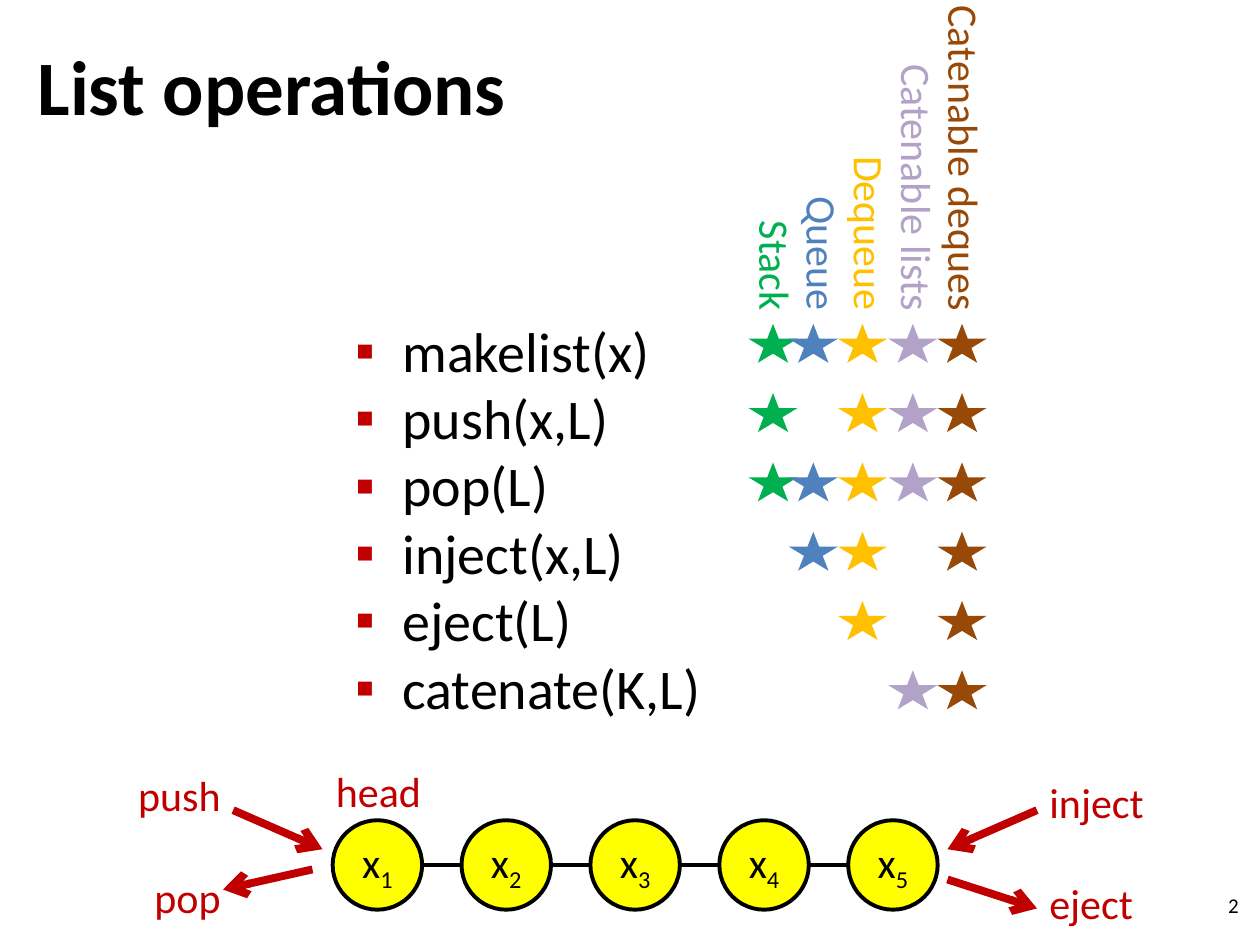
import pptx
import pptx.util
import pptx.dml.color
import pptx.enum.shapes
import pptx.enum.text
import pptx.oxml.ns
import lxml.etree

SHAPE = pptx.enum.shapes.MSO_SHAPE
ALIGN = pptx.enum.text.PP_ALIGN
ANCHOR = pptx.enum.text.MSO_ANCHOR
Pt = pptx.util.Pt
hue = pptx.dml.color.RGBColor.from_string
qn = pptx.oxml.ns.qn

BLACK, RED, YELLOW = "000000", "C00000", "FFFF00"

deck = pptx.Presentation()
deck.slide_width = pptx.util.Inches(10)
deck.slide_height = pptx.util.Inches(7.5)
page = deck.slides.add_slide(deck.slide_layouts[6])
cell = deck.slide_width / 100  # the page is 100 columns by 75 rows


def grid(*cells):
    return [pptx.util.Emu(round(count * cell)) for count in cells]


def add_span(para, text, size, color, bold=False):
    span = para.add_run()
    span.text = text
    looks = {"name": "Calibri", "size": Pt(size), "bold": bold}
    for name, value in looks.items():
        setattr(span.font, name, value)
    span.font.color.rgb = hue(color)
    return span


# Structures: name, colour, star column, rows of the operations they support
structures = [
    ("Stack", "00B050", 59.4, [0, 1, 2]),
    ("Queue", "4F81BD", 62.6, [0, 2, 3]),
    ("Dequeue", "FFC000", 66.5, [0, 1, 2, 3, 4]),
    ("Catenable lists", "B3A2C7", 70.5, [0, 1, 2, 5]),
    ("Catenable deques", "984807", 74.4, [0, 1, 2, 3, 4, 5]),
]
operations = ["makelist(x)", "push(x,L)", "pop(L)", "inject(x,L)", "eject(L)", "catenate(K,L)"]

# Text blocks: place, lines with colours, size, anchor, rotation, paragraph format
right = {"alignment": ALIGN.RIGHT}
top, middle = ANCHOR.TOP, ANCHOR.MIDDLE
names = [(name, color) for name, color, *_ in reversed(structures)]
blocks = [
    ((2, 0.5, 45.7, 12.5), [("List operations", BLACK)], 44, middle, 0, {}),
    ((27.2, 24.6, 32.4, 39.7), [(name, BLACK) for name in operations], 32, top, 0,
     {"line_spacing": Pt(38.5)}),
    ((76, 69.8, 23.3, 4), [("2", BLACK)], 12, middle, 0, right),
    ((55.2, 2, 27.4, 19.9), names, 24, top, 90, {**right, "line_spacing": Pt(27)}),
    ((2.8, 60.6, 15.7, 13.1), [("push", RED), ("pop", RED)], 24, top, 0, right),
    ((82.3, 61.1, 15.7, 13.1), [("inject", RED), ("eject", RED)], 24, top, 0, {}),
    ((18.7, 60.3, 15.7, 5), [("head", RED)], 24, top, 0, right),
]
for place, lines, size, anchor, rotation, layout in blocks:
    box = page.shapes.add_textbox(*grid(*place))
    box.rotation = rotation
    frame = box.text_frame
    frame.word_wrap = True
    frame.vertical_anchor = anchor
    for index, (text, color) in enumerate(lines):
        para = frame.add_paragraph() if index else frame.paragraphs[0]
        for name, value in layout.items():
            setattr(para, name, value)
        add_span(para, text, size, color, bold=size == 44)
        # The two end labels stand one empty line apart
        if len(lines) == 2 and index:
            para.space_before = Pt(29.3)
        # Operations carry red square bullets
        if text in operations:
            props = para._p.get_or_add_pPr()
            indent = grid(3.75)[0]
            props.set("marL", str(indent))
            props.set("indent", str(-indent))
            bullet_color = lxml.etree.SubElement(props, qn("a:buClr"))
            lxml.etree.SubElement(bullet_color, qn("a:srgbClr"), val=RED)
            lxml.etree.SubElement(props, qn("a:buFont"), typeface="Wingdings")
            props[-1].set("typeface", "Arial")
            lxml.etree.SubElement(props, qn("a:buChar"), char="▪")

# Stars marking the supported operations
for name, color, column, rows in structures:
    for row in rows:
        star = page.shapes.add_shape(SHAPE.STAR_5_POINT, *grid(column, 25.7 + 5.5 * row, 3.9, 3.1))
        star.shadow.inherit = False
        star.fill.solid()
        star.fill.fore_color.rgb = hue(color)
        star.line.fill.background()

# List nodes
first, pitch, diameter, node_top, count = 26.4, 10.23, 7.1, 65.1, 5
for index in range(count):
    node = page.shapes.add_shape(
        SHAPE.OVAL, *grid(first + pitch * index, node_top, diameter, diameter))
    node.shadow.inherit = False
    node.fill.solid()
    node.fill.fore_color.rgb = hue(YELLOW)
    node.line.color.rgb = hue(BLACK)
    node.line.width = Pt(2.25)
    frame = node.text_frame
    frame.word_wrap = False
    frame.vertical_anchor = middle
    para = frame.paragraphs[0]
    para.alignment = ALIGN.CENTER
    add_span(para, "x", 24, BLACK)
    subscript = add_span(para, str(index + 1), 24, BLACK)
    subscript._r.get_or_add_rPr().set("baseline", "-25000")

# Links between nodes, then arrows at both ends of the list
axis = node_top + diameter / 2
links = [(first + pitch * index + diameter, axis, first + pitch * (index + 1), axis)
         for index in range(count - 1)]
arrows = [(18.5, 64.3, 25.6, 67.4), (24.8, 69, 17.7, 70.6),
          (82.3, 64.3, 75.2, 67.4), (75.2, 69.8, 82.3, 72.1)]
for ends in links + arrows:
    is_arrow = ends in arrows
    line = page.shapes.add_connector(pptx.enum.shapes.MSO_CONNECTOR.STRAIGHT, *grid(*ends))
    line.line.color.rgb = hue(RED if is_arrow else BLACK)
    line.line.width = Pt(4.5 if is_arrow else 2.25)
    if is_arrow:
        lxml.etree.SubElement(line.line._get_or_add_ln(), qn("a:tailEnd"), type="arrow")
    lxml.etree.SubElement(line._element.spPr, qn("a:effectLst"))

deck.save("out.pptx")
